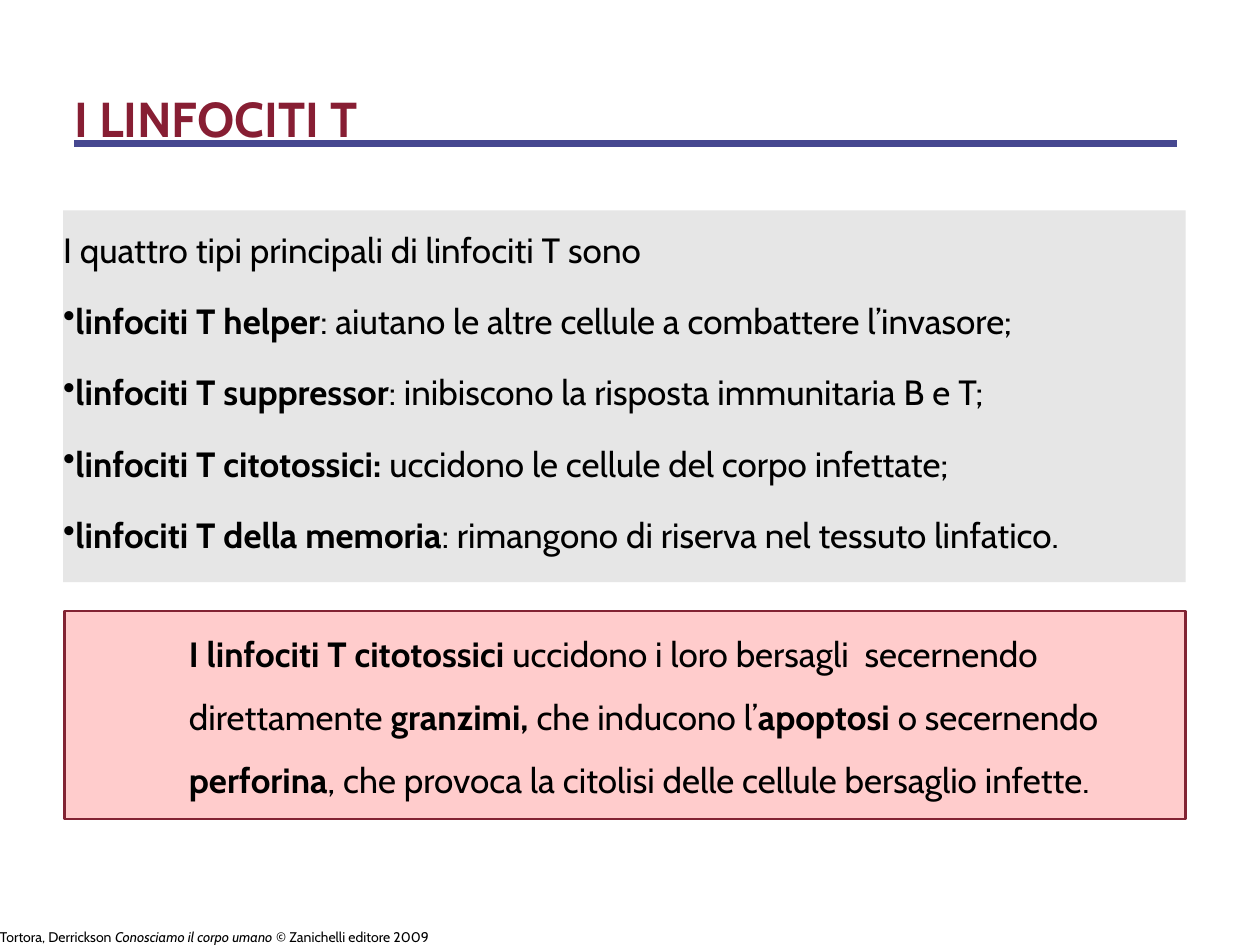
import pptx
import pptx.util
import pptx.dml.color
import pptx.enum.shapes
import pptx.enum.text
from lxml import etree
from pptx.util import Inches, Pt

FONT = "Cabin"
COLORS = {
    "title": "871E33",
    "border": "822333",
    "rule": "464890",
    "panel": "E6E6E6",
    "callout": "FFCCCC",
    "text": "000000",
}

INTRO = "I quattro tipi principali di linfociti T sono"
CELL_TYPES = [
    ("linfociti T helper", ": aiutano le altre cellule a combattere l’invasore;"),
    ("linfociti T suppressor", ": inibiscono la risposta immunitaria B e T;"),
    ("linfociti T citotossici: ", "uccidono le cellule del corpo infettate;"),
    ("linfociti T della memoria", ": rimangono di riserva nel tessuto linfatico."),
]
CALLOUT = [
    ("I linfociti T citotossici ", "b"),
    ("uccidono i loro bersagli  secernendo direttamente ", ""),
    ("granzimi, ", "b"),
    ("che inducono l’", ""),
    ("apoptosi ", "b"),
    ("o secernendo ", ""),
    ("perforina", "b"),
    (", che provoca la citolisi delle cellule bersaglio infette.", ""),
]
FOOTER = [
    ("Tortora, Derrickson ", ""),
    ("Conosciamo il corpo umano ", "i"),
    ("© Zanichelli editore 2009", ""),
]


def rgb(name):
    return pptx.dml.color.RGBColor.from_string(COLORS[name])


def add_runs(p, runs, size, color="text"):
    """Add (text, style) runs; style is "b", "i" or empty."""
    for text, style in runs:
        r = p.add_run()
        r.text = text
        r.font.name = FONT
        r.font.size = Pt(size)
        r.font.bold = style == "b"
        r.font.italic = style == "i"
        r.font.color.rgb = rgb(color)


def set_frame(tf, left=0, top=0):
    tf.word_wrap = True
    tf.vertical_anchor = pptx.enum.text.MSO_ANCHOR.TOP
    tf.margin_left, tf.margin_top = Inches(left), Inches(top)
    tf.margin_right = tf.margin_bottom = 0


def add_text(s, x, y, w, h):
    tf = s.shapes.add_textbox(Inches(x), Inches(y), Inches(w), Inches(h)).text_frame
    set_frame(tf)
    return tf


def add_box(s, x, y, w, h, fill, line=None):
    sp = s.shapes.add_shape(pptx.enum.shapes.MSO_SHAPE.RECTANGLE,
                            Inches(x), Inches(y), Inches(w), Inches(h))
    sp.shadow.inherit = False
    sp.fill.solid()
    sp.fill.fore_color.rgb = rgb(fill)
    if line:
        sp.line.color.rgb = rgb(line)
        sp.line.width = Pt(1.5)
    else:
        sp.line.fill.background()
    return sp


def add_rule(s, x, y, w):
    line = s.shapes.add_connector(pptx.enum.shapes.MSO_CONNECTOR.STRAIGHT,
                                  Inches(x), Inches(y), Inches(x + w), Inches(y))
    line.line.color.rgb = rgb("rule")
    line.line.width = Pt(3.72)
    etree.SubElement(line._element.spPr, pptx.oxml.ns.qn("a:effectLst"))


def add_bullet(p, indent=0.08):
    pPr = p._p.get_or_add_pPr()
    pPr.set("marL", str(Inches(indent)))
    pPr.set("indent", str(-Inches(indent)))
    etree.SubElement(pPr, pptx.oxml.ns.qn("a:buChar"), char="•")


def main():
    prs = pptx.Presentation()
    prs.slide_width, prs.slide_height = Inches(10), Inches(7.5)
    s = prs.slides.add_slide(prs.slide_layouts[6])

    # Title and rule
    add_rule(s, 0.59, 1.14, 8.75)
    tf = add_text(s, 0.59, 0.7, 8.84, 0.41)
    add_runs(tf.paragraphs[0], [("I LINFOCITI T", "b")], 28, "title")

    # Panel with the four cell types
    add_box(s, 0.5, 1.67, 8.91, 2.95, "panel")
    tf = add_text(s, 0.5, 1.81, 9.01, 2.81)
    add_runs(tf.paragraphs[0], [(INTRO, "")], 20)
    for name, role in CELL_TYPES:
        p = tf.add_paragraph()
        p.space_before = Pt(16.8)
        add_bullet(p)
        add_runs(p, [(name, "b"), (role, "")], 20)

    # Callout on cytotoxic cells
    tf = add_box(s, 0.51, 4.85, 8.9, 1.65, "callout", "border").text_frame
    set_frame(tf, left=0.99)
    p = tf.paragraphs[0]
    p.alignment = pptx.enum.text.PP_ALIGN.LEFT
    p.line_spacing = 1.5
    add_runs(p, CALLOUT, 20)

    # Source line
    tf = add_text(s, 0, 7.37, 3.6, 0.13)
    add_runs(tf.paragraphs[0], FOOTER, 8)

    prs.save("out.pptx")


if __name__ == "__main__":
    main()
